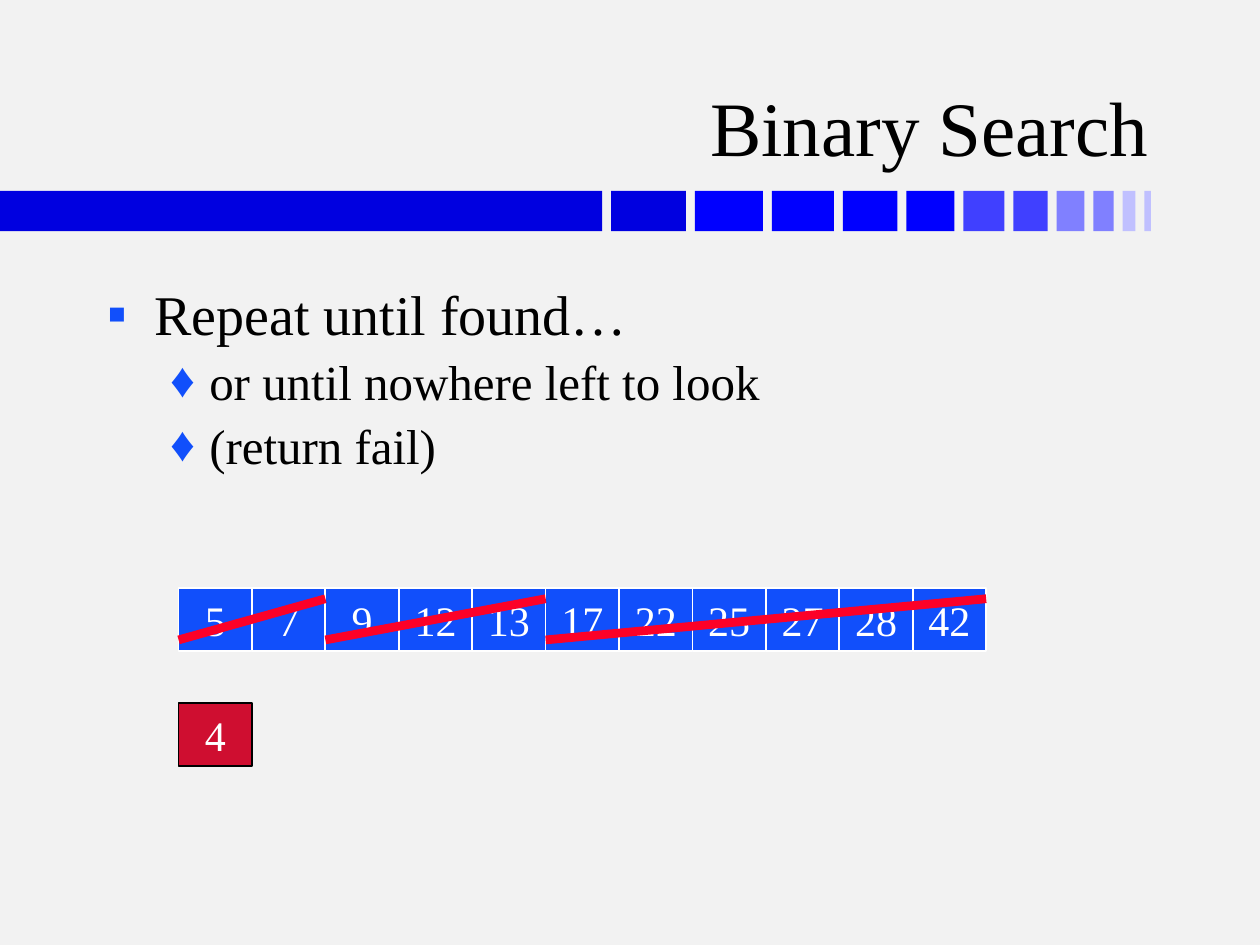
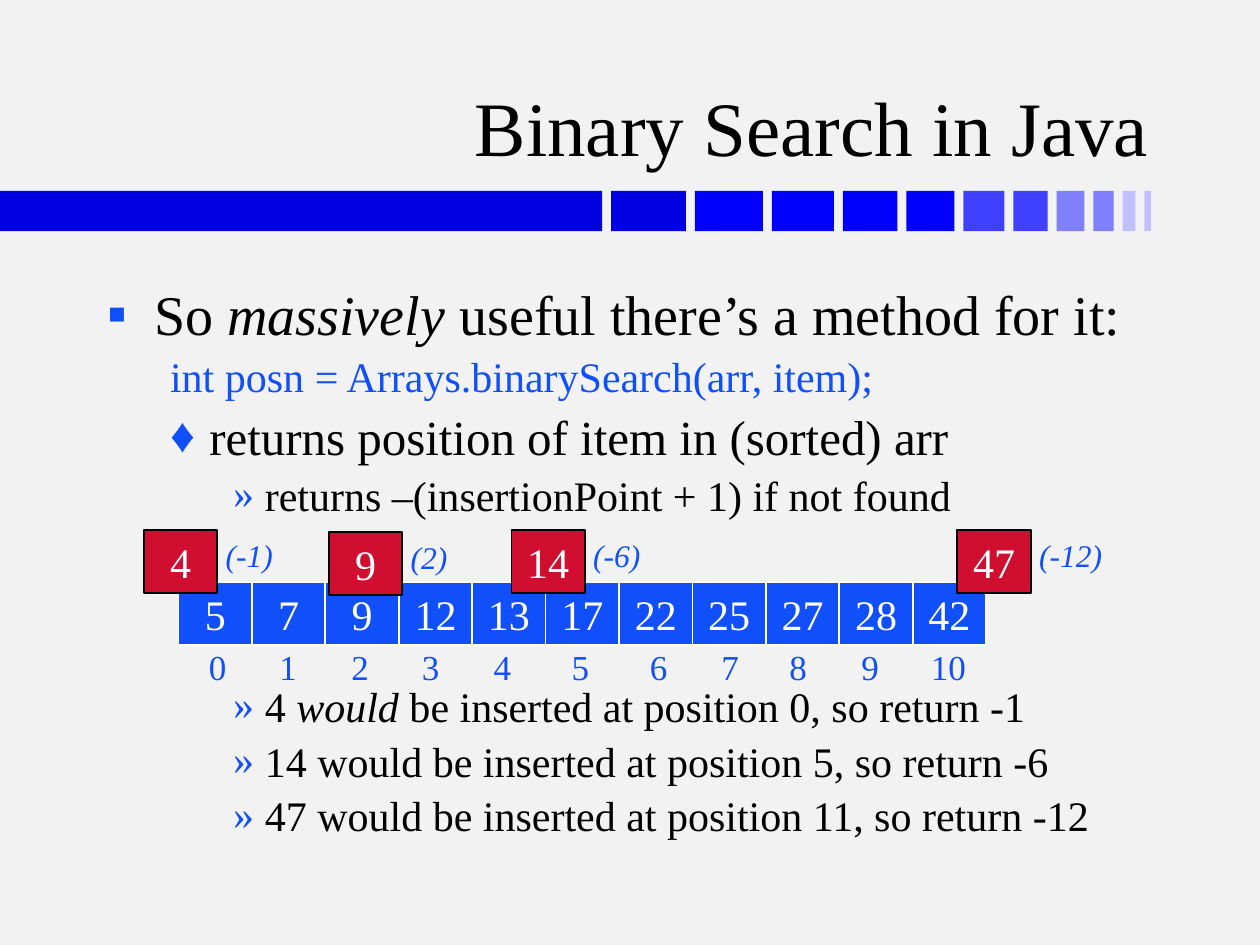
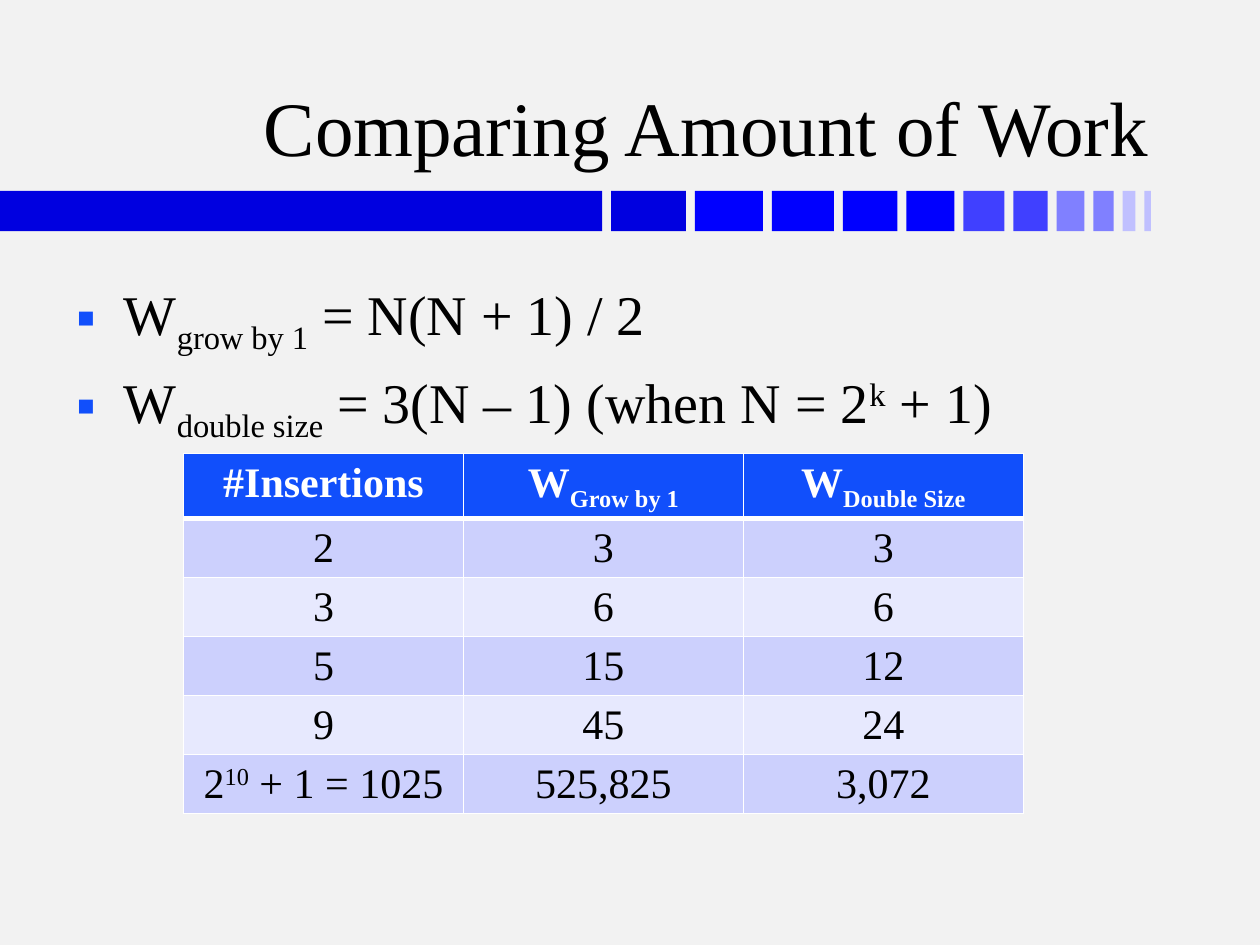
from itertools import accumulate

from lxml.etree import SubElement
from pptx import Presentation
from pptx.dml.color import RGBColor
from pptx.enum.shapes import MSO_CONNECTOR as Line, MSO_SHAPE as Shape
from pptx.enum.text import MSO_ANCHOR as Anchor, PP_ALIGN as Align
from pptx.oxml.ns import qn
from pptx.util import Cm, Pt

FONT = "Times New Roman"
BLACK, WHITE, PAPER = "000000", "FFFFFF", "F2F2F2"
BLUE, RED, STRIKE = "114FFB", "CF0E30", "FC0128"
BANDING = "CCD0FD", "E7E9FE"

# Stripe under the title: (width in cm, colour), left to right
STRIPE = [(12.14, "0000E0"), (1.51, "0000E0"), (1.37, "0000FF"), (1.25, "0000FF"),
          (1.1, "0000FF"), (0.97, "0000FF"), (0.83, "4040FF"), (0.69, "4040FF"),
          (0.56, "8080FF"), (0.41, "8080FF"), (0.26, "C0C0FF"), (0.13, "C0C0FF")]
STRIPE_TOP, STRIPE_HEIGHT, STRIPE_GAP = 3.85, 0.81, 0.18

# Outline levels: bullet, size, left margin, hanging indent (cm), space before (pt)
LEVELS = {
    "point": ("▪", 32, 0.95, 0.95, 6.4),
    "sub": ("♦", 28, 2.06, 0.79, 2.8),
    "code": (None, 24, 2.06, 0.79, 2.4),
    "detail": ("»", 24, 3.18, 0.64, 2.4),
    "detail below array": ("»", 24, 3.18, 0.64, 92),
}

# A text is a string, or a list of (run, style) with style "", "italic", "low" or "high"
SEARCH_POINTS = [
    ("point", "Repeat until found…"),
    ("sub", "or until nowhere left to look"),
    ("sub", "(return fail)"),
]
JAVA_POINTS = [
    ("point", [("So ", ""), ("massively", "italic"),
               (" useful there’s a method for it:", "")]),
    ("code", "int posn = Arrays.binarySearch(arr, item);"),
    ("sub", "returns position of item in (sorted) arr"),
    ("detail", "returns –(insertionPoint + 1) if not found"),
    ("detail below array", [("4 ", ""), ("would", "italic"),
                            (" be inserted at position 0, so return -1", "")]),
    ("detail", "14 would be inserted at position 5, so return -6"),
    ("detail", "47 would be inserted at position 11, so return -12"),
]
WORK_POINTS = [
    ("point", [("W", ""), ("grow by 1", "low"), (" = N(N + 1) / 2", "")]),
    ("point", [("W", ""), ("double size", "low"), (" = 3(N – 1) (when N = 2", ""),
               ("k", "high"), (" + 1)", "")]),
]

ARRAY = [5, 7, 9, 12, 13, 17, 22, 25, 27, 28, 42]
ARRAY_LEFT, CELL_WIDTH, CELL_HEIGHT = 3.6, 1.48, 1.27
STRUCK = [(5, 11), (2, 5), (0, 2)]  # from cell, up to cell
# Items looked up: (item, result, left, top, width of the result)
LOOKUPS = [(14, "(-6)", 10.31, 10.69, 1.47), (4, "(-1)", 2.9, 10.69, 1.47),
           (47, "(-12)", 19.3, 10.69, 1.8), (9, "(2)", 6.63, 10.72, 1.27)]
INDEX_TABS = [0.64, 2.06, 3.51, 4.93, 6.38, 7.95, 9.53, 10.97, 12.34, 13.79, 15.37]

WORK_TABLE = [
    ["#Insertions", [("W", ""), ("Grow by 1", "low")], [("W", ""), ("Double Size", "low")]],
    ["2", "3", "3"],
    ["3", "6", "6"],
    ["5", "15", "12"],
    ["9", "45", "24"],
    [[("2", ""), ("10", "high"), (" + 1 = 1025", "")], "525,825", "3,072"],
]
HEADER_HEIGHT, ROW_HEIGHT = 1.31, 1.19


def rgb(value):
    return RGBColor.from_string(value)


def box(left, top, width, height):
    return Cm(left), Cm(top), Cm(width), Cm(height)


def write(paragraph, text, size, color, align=Align.LEFT, bold=False, italic=False):
    paragraph.alignment = align
    font = paragraph.font
    font.name, font.size, font.bold, font.italic = FONT, Pt(size), bold, italic
    font.color.rgb = rgb(color)
    for words, style in [(text, "")] if isinstance(text, str) else text:
        run = paragraph.add_run()
        run.text = words
        if style == "italic":
            run.font.italic = True
        elif style:
            shift = "-25000" if style == "low" else "30000"
            run._r.get_or_add_rPr().set("baseline", shift)


def add_text(slide, place, wrap=True):
    frame = slide.shapes.add_textbox(*box(*place)).text_frame
    frame.word_wrap = wrap
    return frame


def add_rect(slide, place, fill, outline=None):
    rect = slide.shapes.add_shape(Shape.RECTANGLE, *box(*place))
    rect.shadow.inherit = False
    rect.fill.solid()
    rect.fill.fore_color.rgb = rgb(fill)
    if outline:
        rect.line.color.rgb = rgb(outline)
        rect.line.width = Pt(1)
    else:
        rect.line.fill.background()
    return rect


def add_number(slide, number, left, top, fill, outline):
    frame = add_rect(slide, (left, top, CELL_WIDTH, CELL_HEIGHT), fill, outline).text_frame
    frame.word_wrap = False
    frame.vertical_anchor = Anchor.MIDDLE
    write(frame.paragraphs[0], str(number), 24, WHITE, Align.CENTER)


def cell_left(index):
    return ARRAY_LEFT + index * CELL_WIDTH


def add_array(slide, top):
    for index, number in enumerate(ARRAY):
        add_number(slide, number, cell_left(index), top, BLUE, WHITE)


def add_points(slide, points, place):
    frame = add_text(slide, place)
    for order, (level, text) in enumerate(points):
        paragraph = frame.add_paragraph() if order else frame.paragraphs[0]
        bullet, size, margin, hanging, before = LEVELS[level]
        props = paragraph._p.get_or_add_pPr()
        props.set("marL", str(Cm(margin)))
        props.set("indent", str(-Cm(hanging)))
        if bullet:
            SubElement(SubElement(props, qn("a:buClr")), qn("a:srgbClr"), val=BLUE)
            SubElement(props, qn("a:buFont"), typeface=FONT)
            SubElement(props, qn("a:buChar"), char=bullet)
        paragraph.space_before = Pt(before)
        write(paragraph, text, size, BLUE if level == "code" else BLACK)


def new_slide(prs, title, points, body=(1.91, 5.51, 21.59, 11.43)):
    """Add a slide with the stripe, the title and the outline."""
    slide = prs.slides.add_slide(prs.slide_layouts[6])
    ends = accumulate(width + STRIPE_GAP for width, _ in STRIPE)
    for (width, color), end in zip(STRIPE, ends):
        left = end - width - STRIPE_GAP
        add_rect(slide, (left, STRIPE_TOP, width, STRIPE_HEIGHT), color)
    frame = add_text(slide, (1.87, 0.48, 21.54, 3.12))
    frame.vertical_anchor = Anchor.BOTTOM
    write(frame.paragraphs[0], title, 44, BLACK, Align.RIGHT)
    add_points(slide, points, body)
    return slide


def add_strike(slide, first, last):
    strike = slide.shapes.add_connector(
        Line.STRAIGHT, Cm(cell_left(first)), Cm(12.9), Cm(cell_left(last)), Cm(12.07))
    strike.line.color.rgb = rgb(STRIKE)
    strike.line.width = Pt(5)
    SubElement(strike._element.spPr, qn("a:effectLst"))


def add_indexes(slide):
    paragraph = add_text(slide, (3.5, 12.88, 16.41, 1.12)).paragraphs[0]
    tabs = SubElement(paragraph._p.get_or_add_pPr(), qn("a:tabLst"))
    for position in INDEX_TABS:
        SubElement(tabs, qn("a:tab"), pos=str(Cm(position)), algn="ctr")
    write(paragraph, "".join(f"\t{index}" for index in range(len(ARRAY))), 20, BLUE)


def add_borders(cell, row):
    thick = {0: "lnB", 1: "lnT"}.get(row)
    for side in ("lnL", "lnR", "lnT", "lnB"):
        width = Pt(3 if side == thick else 1)
        border = SubElement(cell._tc.get_or_add_tcPr(), qn(f"a:{side}"), w=str(width))
        SubElement(SubElement(border, qn("a:solidFill")), qn("a:srgbClr"), val=WHITE)


def add_work_table(slide):
    rows, columns = len(WORK_TABLE), len(WORK_TABLE[0])
    height = HEADER_HEIGHT + (rows - 1) * ROW_HEIGHT
    table = slide.shapes.add_table(rows, columns, *box(3.7, 9.14, 16.93, height)).table
    table.horz_banding = False
    for row, texts in enumerate(WORK_TABLE):
        header = row == 0
        table.rows[row].height = Cm(HEADER_HEIGHT if header else ROW_HEIGHT)
        for column, text in enumerate(texts):
            cell = table.cell(row, column)
            cell.margin_bottom = 0
            add_borders(cell, row)
            cell.fill.solid()
            cell.fill.fore_color.rgb = rgb(BLUE if header else BANDING[(row - 1) % 2])
            write(cell.text_frame.paragraphs[0], text, 24, WHITE if header else BLACK,
                  Align.CENTER, bold=header)


def main():
    prs = Presentation()
    prs.slide_width, prs.slide_height = Cm(25.4), Cm(19.05)
    paper = prs.slide_master.background.fill
    paper.solid()
    paper.fore_color.rgb = rgb(PAPER)

    search = new_slide(prs, "Binary Search", SEARCH_POINTS)
    add_array(search, 11.86)
    add_number(search, 4, ARRAY_LEFT, 14.18, RED, BLACK)
    for first, last in STRUCK:
        add_strike(search, first, last)

    java = new_slide(prs, "Binary Search in Java", JAVA_POINTS)
    add_array(java, 11.73)
    add_indexes(java)
    for item, result, left, top, width in LOOKUPS:
        add_number(java, item, left, top, RED, BLACK)
        label = add_text(java, (left + 1.4, top, width, 1.02), wrap=False)
        write(label.paragraphs[0], result, 18, BLUE, italic=True)

    work = new_slide(prs, "Comparing Amount of Work", WORK_POINTS, (1.3, 5.51, 23.01, 11.63))
    add_work_table(work)

    prs.save("out.pptx")


if __name__ == "__main__":
    main()
